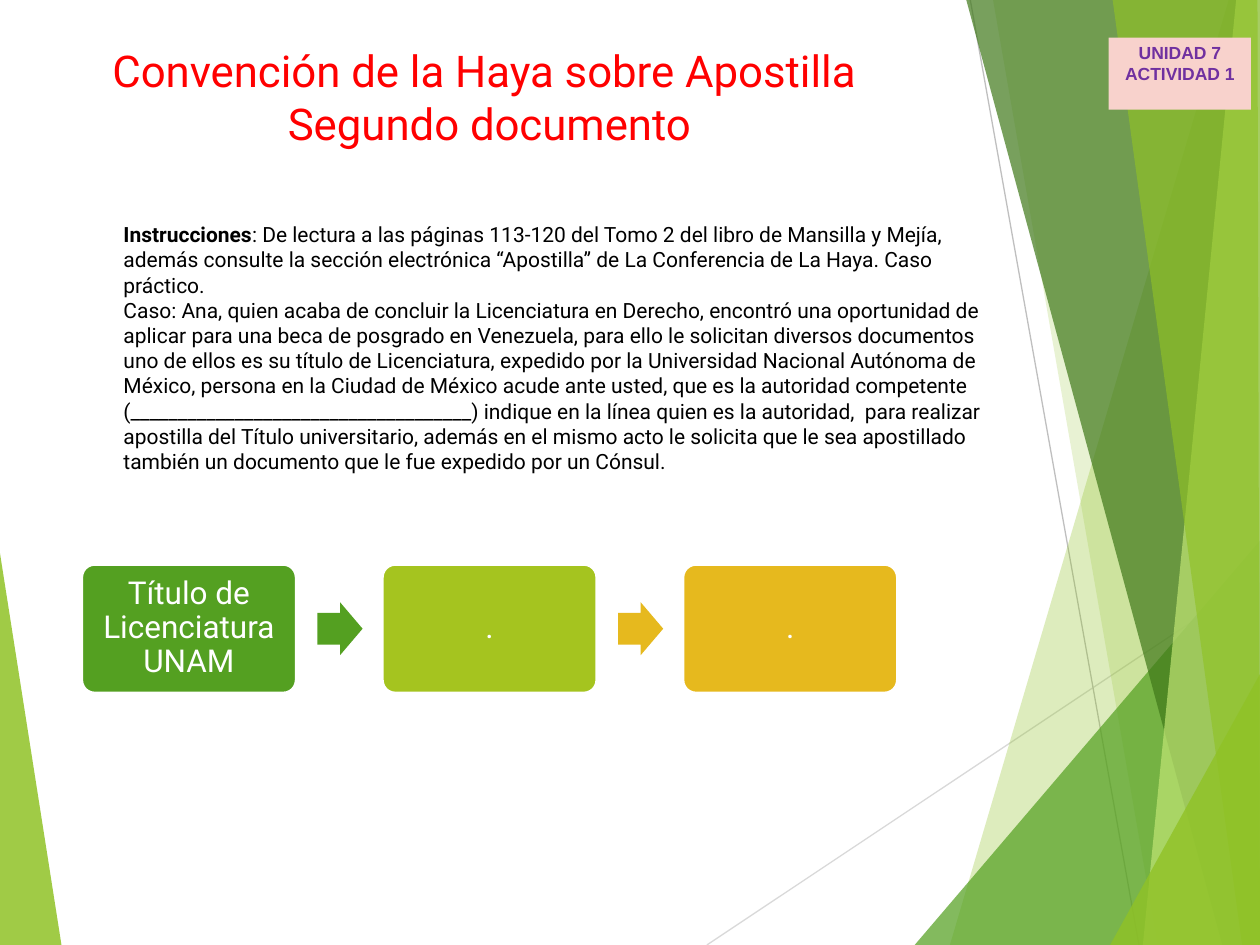
from lxml.etree import SubElement
from pptx import Presentation
from pptx.dml.color import RGBColor
from pptx.enum.shapes import MSO_CONNECTOR, MSO_SHAPE
from pptx.enum.text import MSO_ANCHOR, PP_ALIGN
from pptx.oxml.ns import qn
from pptx.util import Cm, Pt

WIDTH, HEIGHT = 25.4, 19.05
WHITE = "FFFFFF"

# Facets: colour, opacity in percent, corners in cm
FACETS = [
    ("90C226", 85, [(0, 11.15), (1.24, HEIGHT), (0, HEIGHT)]),
    ("90C226", 30, [(24.77, 0), (19.15, HEIGHT), (WIDTH, HEIGHT), (WIDTH, 0)]),
    ("90C226", 20, [(20.02, 0), (23.34, HEIGHT), (WIDTH, HEIGHT), (WIDTH, 0)]),
    ("54A021", 72, [(18.44, HEIGHT), (WIDTH, 10.9), (WIDTH, HEIGHT)]),
    ("3F7819", 70, [(19.48, 0), (24.64, HEIGHT), (WIDTH, HEIGHT), (WIDTH, 0)]),
    ("C0E474", 70, [(24.92, 0), (23.04, HEIGHT), (WIDTH, HEIGHT), (WIDTH, 0)]),
    ("90C226", 65, [(22.43, 0), (25.04, HEIGHT), (WIDTH, HEIGHT), (25.35, 0)]),
    ("90C226", 80, [(22.38, HEIGHT), (WIDTH, 13.59), (WIDTH, HEIGHT)]),
]
RAYS = [
    ("D9D9D9", (14.25, HEIGHT), (WIDTH, 11.62)),
    ("BFBFBF", (19.56, 0), (22.96, HEIGHT)),
]
STEPS = [
    ("Título de Licenciatura UNAM", "54A021"),
    (".", "A5C41F"),
    (".", "E6B91E"),
]
ARROW_COLOURS = ["54A021", "E6B91E"]

INSTRUCTIONS = (
    ": De lectura a las páginas 113-120 del Tomo 2 del libro de Mansilla y Mejía, "
    "además consulte la sección electrónica “Apostilla” de La Conferencia de La Haya. "
    "Caso práctico."
)
CASE = (
    "Caso: Ana, quien acaba de concluir la Licenciatura en Derecho, encontró una "
    "oportunidad de aplicar para una beca de posgrado en Venezuela, para ello le "
    "solicitan diversos documentos uno de ellos es su título de Licenciatura, expedido "
    "por la Universidad Nacional Autónoma de México, persona en la Ciudad de México "
    "acude ante usted, que es la autoridad competente "
    "(____________________________________) indique en la línea quien es la autoridad,  "
    "para realizar apostilla del Título universitario, además en el mismo acto le "
    "solicita que le sea apostillado también un documento que le fue expedido por un "
    "Cónsul."
)


def rgb(colour):
    return RGBColor.from_string(colour)


def paint(shape, colour, outline=None):
    shape.shadow.inherit = False
    shape.fill.solid()
    shape.fill.fore_color.rgb = rgb(colour)
    if outline:
        shape.line.color.rgb = rgb(outline)
        shape.line.width = Pt(1.5)
    else:
        shape.line.fill.background()


def add_facet(slide, colour, opacity, corners):
    start, *others = [(Cm(x), Cm(y)) for x, y in corners]
    outline = slide.shapes.build_freeform(*start)
    outline.add_line_segments(others)
    facet = outline.convert_to_shape()
    paint(facet, colour)
    fill_colour = facet.fill._xPr.find(qn("a:solidFill"))[0]
    SubElement(fill_colour, qn("a:alpha"), val=str(opacity * 1000))


def add_ray(slide, colour, start, end):
    points = [Cm(value) for value in start + end]
    ray = slide.shapes.add_connector(MSO_CONNECTOR.STRAIGHT, *points)
    ray.line.color.rgb = rgb(colour)
    ray.line.width = Pt(0.75)
    SubElement(ray._element.spPr, qn("a:effectLst"))


def add_block(slide, preset, place, colour, adjustments=(), outline=None):
    block = slide.shapes.add_shape(preset, *[Cm(value) for value in place])
    for index, value in enumerate(adjustments):
        block.adjustments[index] = value
    paint(block, colour, outline)
    return block


def write(shape, paragraphs, size, colour, font="Roboto", bold=None,
          align=PP_ALIGN.CENTER, anchor=MSO_ANCHOR.TOP, margins=(0.25, 0.13),
          spacing=None):
    """Each paragraph is a list of (text, bold) runs or a plain string."""
    frame = shape.text_frame
    frame.word_wrap = True
    frame.vertical_anchor = anchor
    frame.margin_left = frame.margin_right = Cm(margins[0])
    frame.margin_top = frame.margin_bottom = Cm(margins[1])
    for index, content in enumerate(paragraphs):
        paragraph = frame.add_paragraph() if index else frame.paragraphs[0]
        paragraph.alignment = align
        paragraph.line_spacing = spacing
        paragraph.font.name = font
        paragraph.font.size = Pt(size)
        paragraph.font.bold = bold
        paragraph.font.color.rgb = rgb(colour)
        runs = [(content, None)] if isinstance(content, str) else content
        for text, run_bold in runs:
            run = paragraph.add_run()
            run.text = text
            run.font.bold = run_bold


def add_text(slide, place, paragraphs, size, colour, **style):
    box = slide.shapes.add_textbox(*[Cm(value) for value in place])
    write(box, paragraphs, size, colour, **style)


def add_process(slide):
    left, top, pitch = 1.65, 11.38, 6.06
    for index, (label, colour) in enumerate(STEPS):
        step = add_block(slide, MSO_SHAPE.ROUNDED_RECTANGLE,
                         (left + index * pitch, top, 4.32, 2.59),
                         colour, [0.1], WHITE)
        write(step, [label], 18, WHITE, anchor=MSO_ANCHOR.MIDDLE,
              margins=(0.18, 0.18), spacing=0.9)
    for index, colour in enumerate(ARROW_COLOURS):
        add_block(slide, MSO_SHAPE.RIGHT_ARROW,
                  (6.4 + index * pitch, 12.14, 0.91, 1.07), colour, [0.6, 0.5])


def main():
    presentation = Presentation()
    presentation.slide_width, presentation.slide_height = Cm(WIDTH), Cm(HEIGHT)
    slide = presentation.slides.add_slide(presentation.slide_layouts[6])

    # Background decoration
    left_facet, *right_facets = FACETS
    add_facet(slide, *left_facet)
    for ray in RAYS:
        add_ray(slide, *ray)
    for facet in right_facets:
        add_facet(slide, *facet)

    # Instructions and case
    add_text(slide, (2.24, 4.34, 18.42, 5.38),
             [[("Instrucciones", True), (INSTRUCTIONS, None)], CASE],
             12, "000000", align=PP_ALIGN.LEFT)

    # Process
    add_process(slide)

    # Title and unit label
    add_text(slide, (1.19, 0.76, 17.35, 2.41),
             ["Convención de la Haya sobre Apostilla ", "Segundo documento"],
             25, "FF0000")
    unit = add_block(slide, MSO_SHAPE.RECTANGLE, (22.35, 0.76, 2.87, 1.45), "F8D2CC")
    write(unit, ["UNIDAD 7", "ACTIVIDAD 1"], 10, "7030A0", font="Arial",
          bold=True, margins=(0.15, 0.08))

    presentation.save("out.pptx")


if __name__ == "__main__":
    main()
